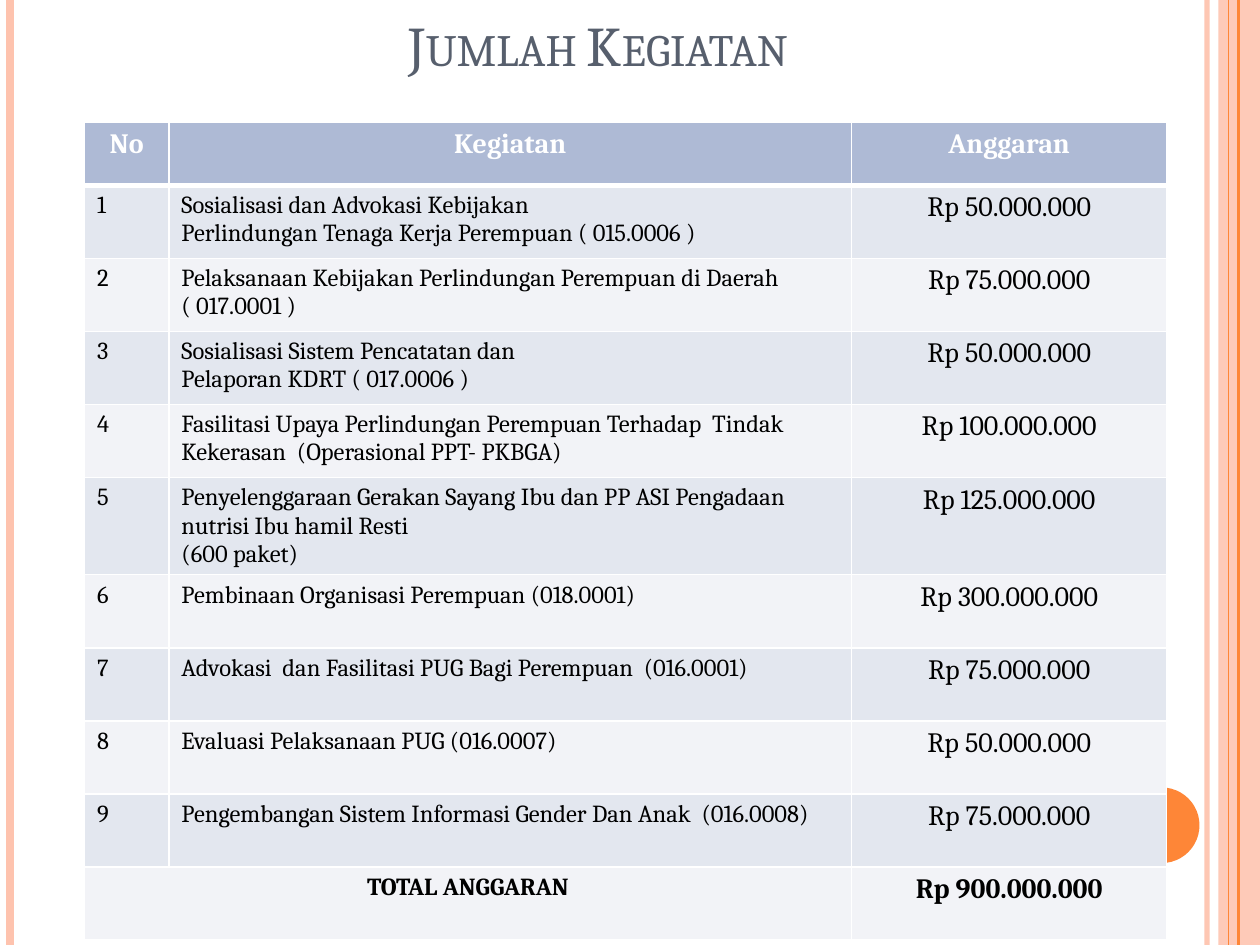
from lxml import etree
from pptx import Presentation
from pptx.dml.color import RGBColor
from pptx.enum.shapes import MSO_CONNECTOR, MSO_SHAPE
from pptx.enum.text import MSO_ANCHOR, PP_ALIGN
from pptx.oxml.ns import qn
from pptx.util import Inches, Pt

STRAIGHT = MSO_CONNECTOR.STRAIGHT
RECT, OVAL = MSO_SHAPE.RECTANGLE, MSO_SHAPE.OVAL
LEFT, CENTER = PP_ALIGN.LEFT, PP_ALIGN.CENTER
BOTTOM = MSO_ANCHOR.BOTTOM

FONT = "Cambria"
ORANGE = RGBColor(0xFE, 0x86, 0x37)
PEACH = RGBColor(0xFE, 0xC3, 0xAE)
SLATE = RGBColor(0x57, 0x5F, 0x6D)
WHITE = RGBColor(0xFF, 0xFF, 0xFF)
BLACK = RGBColor(0, 0, 0)
HEADER = RGBColor(0xAE, 0xBA, 0xD5)
BANDS = [RGBColor(0xF2, 0xF3, 0xF7), RGBColor(0xE3, 0xE7, 0xEF)]

ROWS = [
    ("No", "Kegiatan", "Anggaran"),
    ("1", "Sosialisasi dan Advokasi Kebijakan\n"
          "Perlindungan Tenaga Kerja Perempuan ( 015.0006 )", "Rp 50.000.000"),
    ("2", "Pelaksanaan Kebijakan Perlindungan Perempuan di Daerah ( 017.0001 )",
     "Rp 75.000.000"),
    ("3", "Sosialisasi Sistem Pencatatan dan\nPelaporan KDRT ( 017.0006 )",
     "Rp 50.000.000"),
    ("4", "Fasilitasi Upaya Perlindungan Perempuan Terhadap  Tindak "
          "Kekerasan  (Operasional PPT- PKBGA)", "Rp 100.000.000"),
    ("5", "Penyelenggaraan Gerakan Sayang Ibu dan PP ASI Pengadaan "
          "nutrisi Ibu hamil Resti\n(600 paket)", "Rp 125.000.000"),
    ("6", "Pembinaan Organisasi Perempuan (018.0001)", "Rp 300.000.000"),
    ("7", "Advokasi  dan Fasilitasi PUG Bagi Perempuan  (016.0001)", "Rp 75.000.000"),
    ("8", "Evaluasi Pelaksanaan PUG (016.0007)", "Rp 50.000.000"),
    ("9", "Pengembangan Sistem Informasi Gender Dan Anak  (016.0008)",
     "Rp 75.000.000"),
    ("TOTAL ANGGARAN", "", "Rp 900.000.000"),
]


def set_alpha(fill_parent, percent):
    clr = fill_parent.find(".//" + qn("a:srgbClr"))
    etree.SubElement(clr, qn("a:alpha"), val=str(percent * 1000))


def set_borders(cell, top, bottom):
    tcPr = cell._tc.get_or_add_tcPr()
    sides = [("L", 1), ("R", 1), ("T", top), ("B", bottom)]
    for i, (side, width) in enumerate(sides):
        ln = etree.Element(qn("a:ln" + side), w=str(Pt(width)))
        fill = etree.SubElement(ln, qn("a:solidFill"))
        etree.SubElement(fill, qn("a:srgbClr"), val=str(WHITE))
        tcPr.insert(i, ln)


prs = Presentation()
prs.slide_width, prs.slide_height = Inches(10), Inches(7.5)
s = prs.slides.add_slide(prs.slide_layouts[5])

# Side bands: vertical lines, translucent strip and dot
strip = s.shapes.add_shape(RECT, Inches(9.67), 0, Inches(0.33), Inches(7.5))
dot = s.shapes.add_shape(OVAL, Inches(8.92), Inches(6.25), Inches(0.6), Inches(0.6))
for sp, color in [(strip, PEACH), (dot, ORANGE)]:
    sp.shadow.inherit = False
    sp.fill.solid()
    sp.fill.fore_color.rgb = color
    sp.line.fill.background()
set_alpha(strip._element.spPr, 87)

for x, color, width, alpha in [(9.58, PEACH, 3, 93), (0.08, PEACH, 4.5, 100),
                               (9.83, ORANGE, 1.5, 100), (9.75, ORANGE, 0.75, 100)]:
    line = s.shapes.add_connector(STRAIGHT, Inches(x), 0, Inches(x), Inches(7.5))
    line.line.color.rgb = color
    line.line.width = Pt(width)
    spPr = line._element.spPr
    etree.SubElement(spPr, qn("a:effectLst"))
    if alpha < 100:
        set_alpha(spPr, alpha)

# Title
title = s.shapes.title
title.left, title.top = Inches(0.5), Inches(-0.25)
title.width, title.height = Inches(8.5), Inches(0.92)
tf = title.text_frame
tf.vertical_anchor = BOTTOM
p = tf.paragraphs[0]
p.alignment = CENTER
r = p.add_run()
r.text = "Jumlah Kegiatan"
r.font.name, r.font.size = FONT, Pt(32)
r.font.color.rgb = SLATE
r._r.get_or_add_rPr().set("cap", "small")

# Budget table
table = s.shapes.add_table(len(ROWS), 3, Inches(0.67), Inches(0.97),
                           Inches(8.58), Inches(6.3)).table
for col, width in zip(table.columns, [0.67, 5.42, 2.5]):
    col.width = Inches(width)

last = len(ROWS) - 1
for i, texts in enumerate(ROWS):
    table.rows[i].height = Inches(0.5 if i == 0 else 0.58)
    for j, text in enumerate(texts):
        cell = table.cell(i, j)
        cell.fill.solid()
        cell.fill.fore_color.rgb = BANDS[i % 2] if i else HEADER
        set_borders(cell, 3 if i == 1 else 1, 3 if i == 0 else 1)
        cell.text = text
        for p in cell.text_frame.paragraphs:
            p.alignment = CENTER if j == 2 or i in (0, last) else LEFT
            p.font.name = FONT
            p.font.size = Pt(16 if j == 2 or i == 0 else 14)
            p.font.bold = i in (0, last)
            p.font.color.rgb = BLACK if i else WHITE
table.cell(last, 0).merge(table.cell(last, 1))

prs.save("out.pptx")
